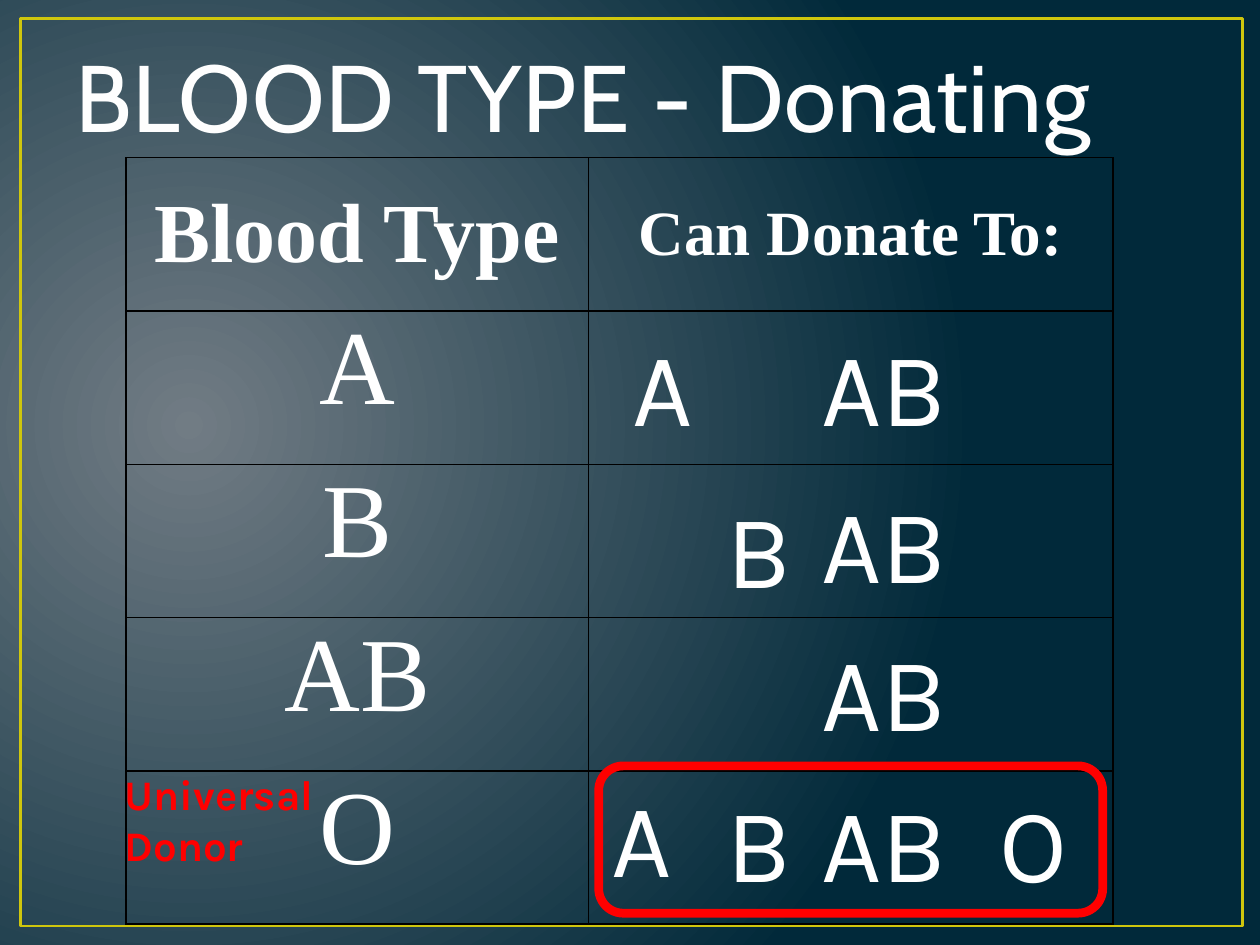
from lxml import etree
from pptx import Presentation
from pptx.dml.color import RGBColor
from pptx.enum.shapes import MSO_SHAPE
from pptx.enum.text import MSO_ANCHOR, MSO_AUTO_SIZE, PP_ALIGN
from pptx.oxml.ns import qn
from pptx.util import Cm, Pt

RECTANGLE, ROUNDED = MSO_SHAPE.RECTANGLE, MSO_SHAPE.ROUNDED_RECTANGLE
TOP, MIDDLE, BOTTOM = MSO_ANCHOR.TOP, MSO_ANCHOR.MIDDLE, MSO_ANCHOR.BOTTOM
LEFT, CENTER = PP_ALIGN.LEFT, PP_ALIGN.CENTER
GROW = MSO_AUTO_SIZE.SHAPE_TO_FIT_TEXT
TITLE_ONLY = 5

WHITE = RGBColor(0xFF, 0xFF, 0xFF)
TITLE_WHITE = RGBColor(0xFE, 0xFE, 0xFE)
TITLE_EDGE = RGBColor(0x38, 0x4F, 0x55)
BLACK = RGBColor(0x00, 0x00, 0x00)
RED = RGBColor(0xFF, 0x00, 0x00)
GOLD = RGBColor(0xCF, 0xC6, 0x0D)
GREY = RGBColor(0x71, 0x7C, 0x84)
NAVY = RGBColor(0x01, 0x29, 0x3A)

TITLE_FONT, TABLE_FONT, LETTER_FONT = "Cabin", "Times New Roman", "Karla"


def make_line(parent, tag, color, width):
    """Add a solid line element, such as a cell border, to parent."""
    line = etree.SubElement(parent, qn(tag), w=str(int(Pt(width))))
    fill = etree.SubElement(line, qn("a:solidFill"))
    etree.SubElement(fill, qn("a:srgbClr"), val=str(color))
    return line


class SlideBuilder:
    def __init__(self, deck):
        self.slide = deck.slides.add_slide(deck.slide_layouts[TITLE_ONLY])
        self.shapes = self.slide.shapes

    def format_text(self, frame, font, size, color, bold=False, align=LEFT):
        for para in frame.paragraphs:
            para.alignment = align
            for span in para.runs:
                span.font.name = font
                span.font.size = Pt(size)
                span.font.bold = bold
                span.font.color.rgb = color

    def background(self, center, edge):
        fill = self.slide.background.fill
        fill.gradient()
        for stop, color in zip(fill.gradient_stops, (center, edge)):
            stop.color.rgb = color
        gradient = next(self.slide.element.iter(qn("a:gradFill")))
        gradient.remove(gradient.find(qn("a:lin")))
        circle = etree.SubElement(gradient, qn("a:path"), path="circle")
        etree.SubElement(circle, qn("a:fillToRect"),
                         l="15000", t="50000", r="85000", b="60000")

    def title(self, text, left, top, width, height):
        title = self.shapes.title
        title.left, title.top = Cm(left), Cm(top)
        title.width, title.height = Cm(width), Cm(height)
        frame = title.text_frame
        frame.text = text
        frame.vertical_anchor = BOTTOM
        self.format_text(frame, TITLE_FONT, 54, TITLE_WHITE)
        properties = frame.paragraphs[0].runs[0].font._element
        properties.set("spc", "50")
        properties.insert(0, make_line(properties, "a:ln", TITLE_EDGE, 1.05))

    def outline(self, kind, left, top, width, height, color, weight):
        box = self.shapes.add_shape(kind, Cm(left), Cm(top), Cm(width), Cm(height))
        box.shadow.inherit = False
        box.fill.background()
        box.line.color.rgb = color
        box.line.width = Pt(weight)

    def text(self, text, left, top, width, height,
             size=60, color=WHITE, bold=False):
        box = self.shapes.add_textbox(Cm(left), Cm(top), Cm(width), Cm(height))
        frame = box.text_frame
        frame.word_wrap = True
        frame.auto_size = GROW
        frame.text = text
        self.format_text(frame, LETTER_FONT, size, color, bold)

    def cell(self, cell, text, size, bold, anchor):
        cell.text = text
        cell.vertical_anchor = anchor
        cell.margin_left = cell.margin_right = Cm(0.18)
        cell.margin_top = cell.margin_bottom = 0
        self.format_text(cell.text_frame, TABLE_FONT, size, WHITE, bold, CENTER)
        properties = cell._tc.get_or_add_tcPr()
        for side in ("a:lnL", "a:lnR", "a:lnT", "a:lnB"):
            make_line(properties, side, BLACK, 1)
        cell.fill.background()

    def table(self, headers, labels, left, top, widths, row_height):
        count = len(labels) + 1
        table = self.shapes.add_table(
            count, len(widths), Cm(left), Cm(top),
            Cm(sum(widths)), Cm(row_height * count)).table
        table.first_row = table.horz_banding = False
        for column, width in zip(table.columns, widths):
            column.width = Cm(width)
        for row in table.rows:
            row.height = Cm(row_height)
        for column, (text, size) in enumerate(headers):
            self.cell(table.cell(0, column), text, size, True, MIDDLE)
        for row, label in enumerate(labels, start=1):
            self.cell(table.cell(row, 0), label, 60, False, TOP)
            self.cell(table.cell(row, 1), "", 60, False, TOP)


def main():
    deck = Presentation()
    deck.slide_width, deck.slide_height = Cm(25.4), Cm(19.05)
    builder = SlideBuilder(deck)

    # Backdrop, frame and title
    builder.background(GREY, NAVY)
    builder.outline(RECTANGLE, 0.41, 0.38, 24.64, 18.29, GOLD, 1.5)
    builder.title("BLOOD TYPE - Donating", 1.27, 0, 22.86, 3.18)

    # Blood type table
    builder.table([("Blood Type", 48), ("Can Donate To:", 36)],
                  ["A", "B", "AB", "O"], 2.54, 3.18, [9.32, 10.58], 3.09)

    # Recipients of each type: letter, left, top, width
    recipients = [
        ("A", 12.5, 6.35, 2.97), ("AB", 16.31, 6.35, 3.61),
        ("B", 14.4, 9.63, 2.97), ("AB", 16.31, 9.53, 4.45),
        ("AB", 16.31, 12.5, 4.01),
        ("A", 12.07, 15.44, 2.97), ("B", 14.4, 15.55, 2.97),
        ("AB", 16.31, 15.55, 4.01), ("O", 19.89, 15.55, 2.97),
    ]
    for letter, left, top, width in recipients:
        builder.text(letter, left, top, width, 2.82)

    # Universal donor highlight
    builder.outline(ROUNDED, 12.07, 15.44, 10.16, 2.97, RED, 5)
    builder.text("Universal\nDonor", 2.26, 15.37, 7.42, 2.31, 24, RED, True)

    deck.save("out.pptx")


if __name__ == "__main__":
    main()
